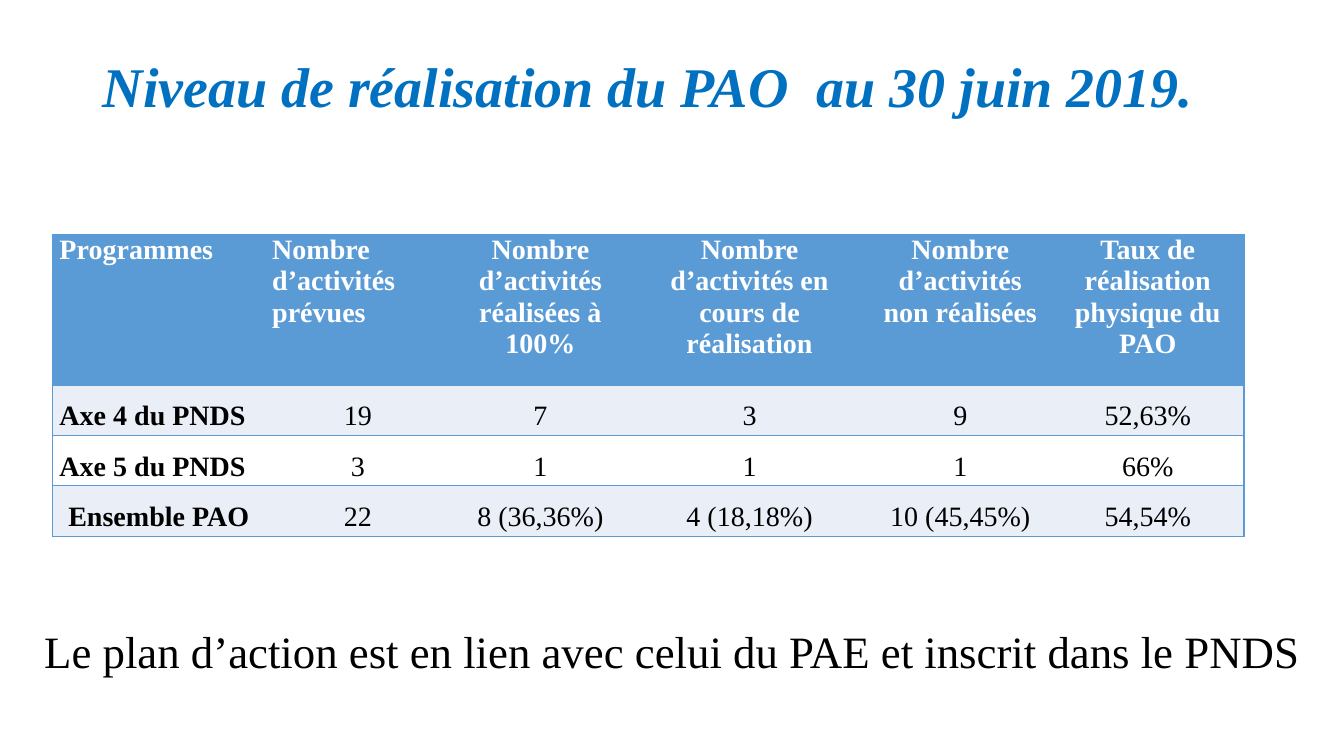
from dataclasses import dataclass

from lxml import etree
from pptx import Presentation
from pptx.dml.color import RGBColor
from pptx.enum.text import MSO_ANCHOR, PP_ALIGN
from pptx.oxml.ns import qn
from pptx.util import Inches, Pt

LEFT, CENTER = PP_ALIGN.LEFT, PP_ALIGN.CENTER
TOP, MIDDLE = MSO_ANCHOR.TOP, MSO_ANCHOR.MIDDLE
PLAIN = "{2D5ABB26-0587-4C30-8999-92F81FD0307C}"


@dataclass(frozen=True)
class Theme:
    """Hold the colours, font and type sizes."""
    font: str = "Times New Roman"
    title: str = "0070C0"
    head: str = "5B9BD5"
    band: str = "EAEFF7"
    white: str = "FFFFFF"
    ink: str = "000000"
    big: int = 40
    note: int = 32
    cell: int = 20


THEME = Theme()
WIDTHS = [2.11, 1.84, 1.78, 2.37, 1.81, 1.91]
HEIGHTS = [1.49, 0.49, 0.49, 0.49]
ROWS = [
    ["Programmes", "Nombre d’activités prévues",
     "Nombre d’activités réalisées à 100%",
     "Nombre d’activités en cours de réalisation",
     "Nombre d’activités non réalisées",
     "Taux de réalisation physique du PAO"],
    ["Axe 4 du PNDS", "19", "7", "3", "9", "52,63%"],
    ["Axe 5 du PNDS", "3", "1", "1", "1", "66%"],
    ["Ensemble PAO", "22", "8 (36,36%)", "4 (18,18%)", "10 (45,45%)",
     "54,54%"],
]


def write(frame, text, size, color, bold=False, italic=False,
          align=LEFT, line=0.9, after=10):
    """Fill a text frame with one styled paragraph."""
    frame.text = text
    frame.word_wrap = True
    para = frame.paragraphs[0]
    para.alignment = align
    para.line_spacing = line
    para.space_after = Pt(after)
    font = para.runs[0].font
    font.name, font.size = THEME.font, Pt(size)
    font.bold, font.italic = bold, italic
    font.color.rgb = RGBColor.from_string(color)


def add_line(slide, box, text, size, color, bold=False, italic=False):
    """Place one line of text, centred by height in its box."""
    frame = slide.shapes.add_textbox(*map(Inches, box)).text_frame
    write(frame, text, size, color, bold, italic)
    frame.vertical_anchor = MIDDLE


def add_edge(cell, side):
    """Draw one border of a cell."""
    props = cell._tc.get_or_add_tcPr()
    edge = etree.SubElement(props, qn(f"a:ln{side}"), w=str(Pt(1)))
    fill = etree.SubElement(edge, qn("a:solidFill"))
    etree.SubElement(fill, qn("a:srgbClr"), val=THEME.head)


def style_cell(cell, row, col, text):
    """Set the text, borders and fill of one cell."""
    head = row == 0
    last = len(ROWS) - 1
    left = col == 0 and row < last or head and col == 1
    write(cell.text_frame, text, THEME.cell,
          THEME.white if head else THEME.ink, bold=head or col == 0,
          align=LEFT if left else CENTER, line=1 if head else 1.5, after=8)
    cell.margin_left = cell.margin_right = Inches(0.07)
    cell.margin_top = cell.margin_bottom = 0
    cell.vertical_anchor = TOP
    sides = {0: "LTB", len(WIDTHS) - 1: "RTB"}.get(col, "TB")
    for side in sides:
        add_edge(cell, side)
    color = THEME.head if head else THEME.band if row % 2 else THEME.white
    cell.fill.solid()
    cell.fill.fore_color.rgb = RGBColor.from_string(color)


def add_grid(slide, box):
    """Place the table of results in its box."""
    shape = slide.shapes.add_table(len(ROWS), len(WIDTHS),
                                   *map(Inches, box))
    table = shape.table
    table.first_row = table.horz_banding = False
    table._tbl.tblPr.find(qn("a:tableStyleId")).text = PLAIN
    for col, width in zip(table.columns, WIDTHS):
        col.width = Inches(width)
    for row, height in zip(table.rows, HEIGHTS):
        row.height = Inches(height)
    for row, texts in enumerate(ROWS):
        for col, text in enumerate(texts):
            style_cell(table.cell(row, col), row, col, text)


def main():
    """Build and save the slide."""
    deck = Presentation()
    deck.slide_width, deck.slide_height = Inches(13.33), Inches(7.5)
    slide = deck.slides.add_slide(deck.slide_layouts[6])
    add_line(slide, (0.92, 0.4, 12.19, 0.98),
             "Niveau de réalisation du PAO  au 30 juin 2019.",
             THEME.big, THEME.title, bold=True, italic=True)
    add_grid(slide, (0.52, 2.33, sum(WIDTHS), sum(HEIGHTS)))
    add_line(slide, (0.34, 6.02, 12.77, 0.93),
             "Le plan d’action est en lien avec celui du PAE et inscrit "
             "dans le PNDS", THEME.note, THEME.ink)
    deck.save("out.pptx")


if __name__ == "__main__":
    main()
